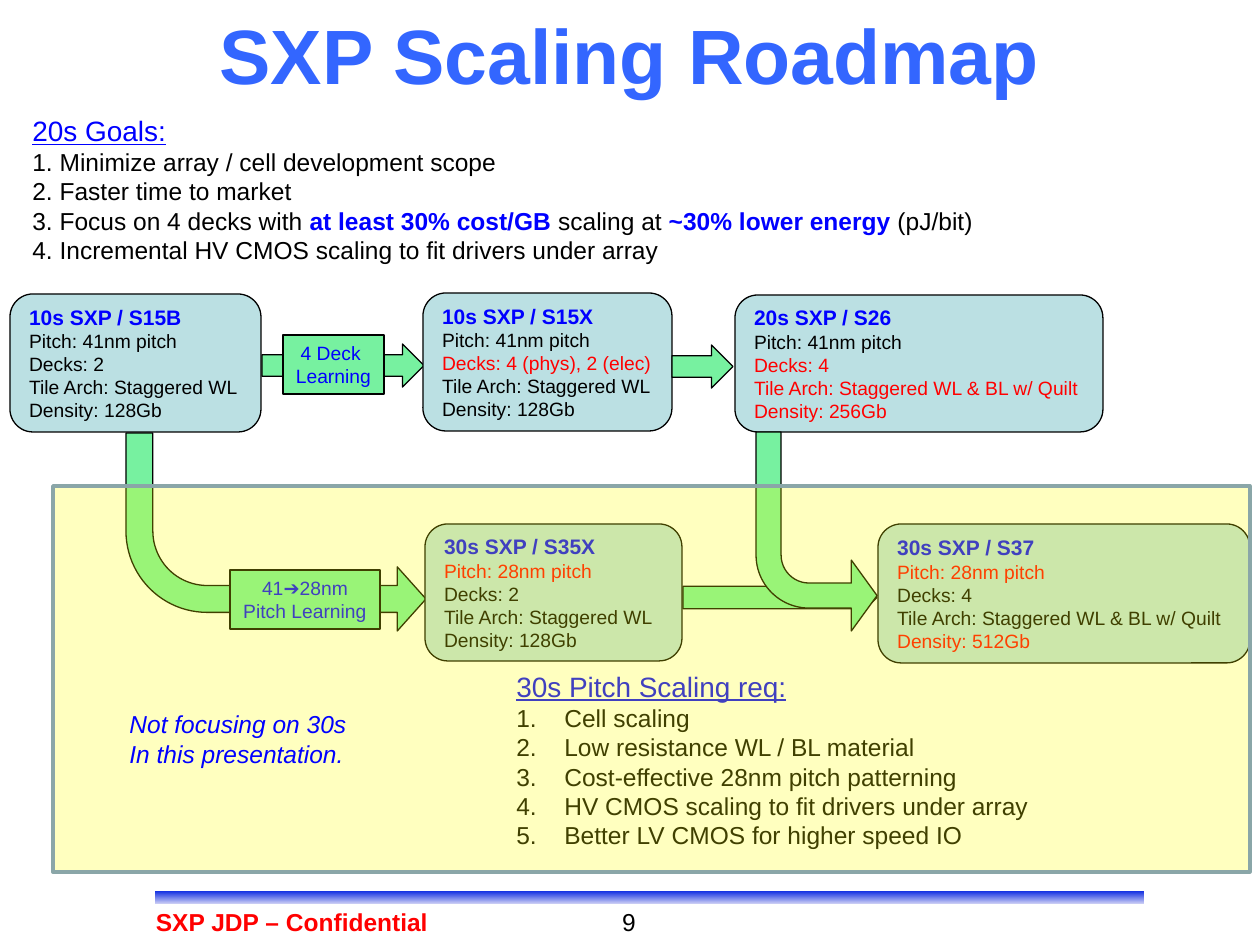
from dataclasses import dataclass, replace
from lxml.etree import SubElement
from pptx import Presentation
from pptx.dml.color import RGBColor
from pptx.enum.shapes import MSO_SHAPE
from pptx.enum.text import MSO_ANCHOR, PP_ALIGN
from pptx.oxml.ns import qn
from pptx.util import Pt

EMU_PER_PX = 914400 / 126


@dataclass(frozen=True)
class Style:
    size: int
    color: str
    bold: bool = False
    italic: bool = False
    underline: bool = False


@dataclass(frozen=True)
class Theme:
    font: str = "Arial"
    card: str = "BBE0E3"
    arrow: str = "77F1A0"
    outline: str = "000000"
    veil: str = "FFFF00"
    veil_outline: str = "8AA6A8"
    bar_top: str = "0020E0"
    bar_bottom: str = "DADAF6"
    white: str = "FFFFFF"
    title: Style = Style(44, "3366FF", bold=True)
    heading: Style = Style(16, "0000FF", underline=True)
    body: Style = Style(14, "000000")
    strong: Style = Style(14, "0000FF", bold=True)
    note: Style = Style(14, "0000FF", italic=True)
    footer: Style = Style(14, "FF0000", bold=True)
    card_name: Style = Style(12, "0000FF", bold=True)
    fact: Style = Style(11, "000000")
    label: Style = Style(11, "0000FF")

    @property
    def changed_fact(self):
        return replace(self.fact, color="FF0000")


THEME = Theme()
FACTS = ("Pitch", "Decks", "Tile Arch", "Density")


def px(*lengths):
    return [round(length * EMU_PER_PX) for length in lengths]


def rgb(color):
    return RGBColor.from_string(color)


def write_lines(text_frame, lines, align=PP_ALIGN.LEFT):
    for index, spans in enumerate(lines):
        paragraph = text_frame.paragraphs[0] if index == 0 else text_frame.add_paragraph()
        paragraph.alignment = align
        for text, style in spans:
            run = paragraph.add_run()
            run.text = text
            run.font.name = THEME.font
            run.font.size = Pt(style.size)
            run.font.color.rgb = rgb(style.color)
            run.font.bold = style.bold
            run.font.italic = style.italic
            run.font.underline = style.underline


def add_text(slide, box, lines, align=PP_ALIGN.LEFT, anchor=MSO_ANCHOR.TOP):
    text_frame = slide.shapes.add_textbox(*px(*box)).text_frame
    text_frame.word_wrap = True
    text_frame.vertical_anchor = anchor
    write_lines(text_frame, lines, align)
    return text_frame


def number_paragraphs(paragraphs):
    indent = px(48)[0]
    for paragraph in paragraphs:
        properties = paragraph._p.get_or_add_pPr()
        properties.set("marL", str(indent))
        properties.set("indent", str(-indent))
        SubElement(properties, qn("a:buAutoNum"), type="arabicPeriod")


def add_block(slide, kind, box, fill, outline=THEME.outline, width=0.75):
    shape = slide.shapes.add_shape(kind, *px(*box))
    shape.shadow.inherit = False
    shape.fill.solid()
    shape.fill.fore_color.rgb = rgb(fill)
    shape.line.color.rgb = rgb(outline)
    shape.line.width = Pt(width)
    return shape


def add_card(slide, box, name, values, changed=()):
    shape = add_block(slide, MSO_SHAPE.ROUNDED_RECTANGLE, box, THEME.card)
    lines = [[(name, THEME.card_name)]]
    for fact, value in zip(FACTS, values):
        style = THEME.changed_fact if fact in changed else THEME.fact
        lines.append([(f"{fact}: {value}", style)])
    shape.text_frame.word_wrap = True
    shape.text_frame.vertical_anchor = MSO_ANCHOR.MIDDLE
    write_lines(shape.text_frame, lines)


def add_label(slide, box, texts):
    shape = add_block(slide, MSO_SHAPE.RECTANGLE, box, THEME.arrow)
    shape.text_frame.word_wrap = False
    shape.text_frame.vertical_anchor = MSO_ANCHOR.TOP
    write_lines(shape.text_frame, [[(text, THEME.label)] for text in texts], PP_ALIGN.CENTER)


def add_right_arrow(slide, box):
    add_block(slide, MSO_SHAPE.RIGHT_ARROW, box, THEME.arrow)


def add_bent_arrow(slide, box, adjustments):
    shape = add_block(slide, MSO_SHAPE.BENT_ARROW, box, THEME.arrow)
    for index, value in enumerate(adjustments):
        shape.adjustments[index] = value
    shape.rotation = 180
    shape.element.spPr.find(qn("a:xfrm")).set("flipH", "1")


def add_footer_bar(slide, box):
    shape = add_block(slide, MSO_SHAPE.RECTANGLE, box, THEME.white, THEME.white, 1)
    shape.fill.gradient()
    shape.fill.gradient_angle = 270
    for stop, color in zip(shape.fill.gradient_stops, (THEME.bar_top, THEME.bar_bottom)):
        stop.color.rgb = rgb(color)


def add_veil(slide, box):
    shape = add_block(slide, MSO_SHAPE.RECTANGLE, box, THEME.veil, THEME.veil_outline, 2)
    color = shape.element.spPr.find(qn("a:solidFill")).find(qn("a:srgbClr"))
    SubElement(color, qn("a:alpha"), val="25000")


def add_goals(slide):
    body, strong = THEME.body, THEME.strong
    add_text(slide, (20, 107, 1009, 165), [
        [("20s Goals:", THEME.heading)],
        [("1. Minimize array / cell development scope", body)],
        [("2. Faster time to market", body)],
        [("3. Focus on 4 decks with ", body), ("at least 30% cost/GB ", strong),
         ("scaling at ", body), ("~30% lower energy ", strong), ("(pJ/bit)", body)],
        [("4. Incremental HV CMOS scaling to fit drivers under array", body)],
    ])


def add_requirements(slide):
    requirements = (
        "Cell scaling",
        "Low resistance WL / BL material",
        "Cost-effective 28nm pitch patterning",
        "HV CMOS scaling to fit drivers under array",
        "Better LV CMOS for higher speed IO",
    )
    lines = [[("30s Pitch Scaling req:", THEME.heading)]]
    lines += [[(text, THEME.body)] for text in requirements]
    text_frame = add_text(slide, (504, 663, 539, 229), lines)
    number_paragraphs(text_frame.paragraphs[1:])


def main():
    presentation = Presentation()
    presentation.slide_width, presentation.slide_height = px(1260, 945)
    slide = presentation.slides.add_slide(presentation.slide_layouts[6])
    staggered, quilt = "Staggered WL", "Staggered WL & BL w/ Quilt"

    add_footer_bar(slide, (154, 890, 991, 15))
    add_text(slide, (63, 1, 1134, 106), [[("SXP Scaling Roadmap", THEME.title)]],
             PP_ALIGN.CENTER, MSO_ANCHOR.MIDDLE)
    add_card(slide, (10, 294, 251, 138), "10s SXP / S15B",
             ("41nm pitch", "2", staggered, "128Gb"))
    add_card(slide, (735, 295, 368, 137), "20s SXP / S26",
             ("41nm pitch", "4", quilt, "256Gb"), ("Decks", "Tile Arch", "Density"))
    add_card(slide, (878, 524, 372, 139), "30s SXP / S37",
             ("28nm pitch", "4", quilt, "512Gb"), ("Pitch", "Density"))
    add_goals(slide)
    add_requirements(slide)
    add_bent_arrow(slide, (126, 433, 300, 198), (0.136, 0.162, 0.145, 0.411))
    add_label(slide, (230, 570, 150, 59), ("41➔28nm", "Pitch Learning"))
    add_card(slide, (425, 524, 257, 137), "30s SXP / S35X",
             ("28nm pitch", "2", staggered, "128Gb"), ("Pitch",))
    add_right_arrow(slide, (262, 344, 162, 43))
    add_label(slide, (283, 335, 101, 59), ("4 Deck ", "Learning"))
    add_right_arrow(slide, (683, 575, 194, 45))
    add_bent_arrow(slide, (756, 432, 121, 199), (0.207, 0.293, 0.212, 0.438))
    add_card(slide, (423, 293, 249, 138), "10s SXP / S15X",
             ("41nm pitch", "4 (phys), 2 (elec)", staggered, "128Gb"), ("Decks",))
    add_right_arrow(slide, (672, 345, 61, 43))
    add_text(slide, (504, 901, 144, 34), [[("9", THEME.body)]], PP_ALIGN.RIGHT)
    add_text(slide, (91, 901, 402, 33), [[("SXP JDP – Confidential", THEME.footer)]],
             PP_ALIGN.CENTER)
    add_veil(slide, (53, 486, 1197, 386))
    add_text(slide, (117, 703, 258, 72), [
        [("Not focusing on 30s", THEME.note)],
        [("In this presentation.", THEME.note)],
    ])
    presentation.save("out.pptx")


if __name__ == "__main__":
    main()
